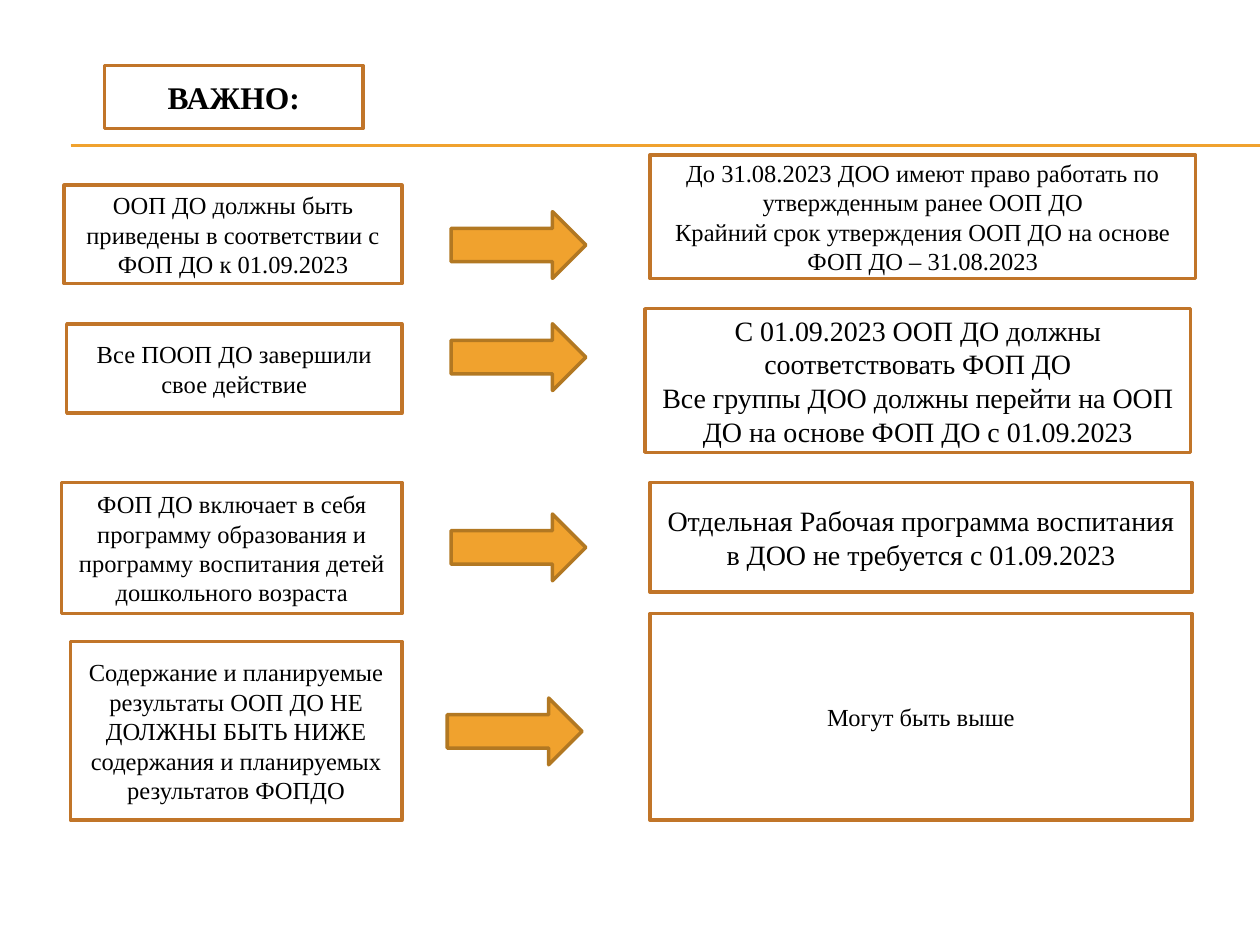
from lxml import etree
from pptx import Presentation
from pptx.dml.color import RGBColor
from pptx.enum.shapes import MSO_CONNECTOR, MSO_SHAPE
from pptx.enum.text import MSO_ANCHOR, PP_ALIGN
from pptx.oxml.ns import qn
from pptx.util import Inches, Pt

WHITE = RGBColor(0xFF, 0xFF, 0xFF)
BLACK = RGBColor(0x00, 0x00, 0x00)
AMBER = RGBColor(0xF0, 0xA2, 0x2E)
DARK_AMBER = RGBColor(0xB2, 0x78, 0x22)
BROWN = RGBColor(0xC1, 0x75, 0x29)

RECTANGLE = MSO_SHAPE.RECTANGLE
RIGHT_ARROW = MSO_SHAPE.RIGHT_ARROW
STRAIGHT = MSO_CONNECTOR.STRAIGHT
MIDDLE = MSO_ANCHOR.MIDDLE
CENTER = PP_ALIGN.CENTER

FONT = "Times New Roman"
COLUMNS, ROWS = 100, 75
LEFT_EDGE = 31.9  # shared right side of the requirement boxes
ARROW_WIDTH, ARROW_HEIGHT = 10.7, 5.3

# left, top, height, text
REQUIREMENTS = [
    (5.1, 14.7, 7.8, "ООП ДО должны быть приведены в соответствии с ФОП ДО к 01.09.2023"),
    (5.3, 25.7, 7.1, "Все ПООП ДО завершили свое действие"),
    (4.9, 38.3, 10.4, "ФОП ДО включает в себя программу образования и программу "
                      "воспитания детей дошкольного возраста"),
    (5.6, 50.9, 14.2, "Содержание и планируемые результаты ООП ДО НЕ ДОЛЖНЫ БЫТЬ НИЖЕ "
                      "содержания и планируемых результатов ФОПДО"),
]
# left, top, width, height, font size, paragraphs
CONSEQUENCES = [
    (51.6, 12.3, 43.3, 9.8, 14, [
        "До 31.08.2023 ДОО имеют право работать по утвержденным ранее ООП ДО",
        "Крайний срок утверждения ООП ДО на основе ФОП ДО – 31.08.2023"]),
    (51.2, 24.5, 43.3, 11.4, 16, [
        "С 01.09.2023 ООП ДО должны соответствовать ФОП ДО",
        "Все группы ДОО должны перейти на ООП ДО на основе ФОП ДО с 01.09.2023"]),
    (51.6, 38.3, 43, 8.7, 16, [
        "Отдельная Рабочая программа воспитания в ДОО не требуется с 01.09.2023"]),
    (51.6, 48.7, 43, 16.4, 14, ["Могут быть выше"]),
]
ARROWS = [(35.8, 16.8), (35.8, 25.7), (35.8, 40.8), (35.5, 55.4)]


class SlideBuilder:
    """Draws styled elements, placed in grid columns and rows."""

    def __init__(self, deck):
        self.page = deck.slides.add_slide(deck.slide_layouts[6])
        self.column = deck.slide_width / COLUMNS
        self.row = deck.slide_height / ROWS

    def place(self, across, down):
        return round(across * self.column), round(down * self.row)

    def shape(self, kind, left, top, width, height, fill, outline):
        shape = self.page.shapes.add_shape(
            kind, *self.place(left, top), *self.place(width, height))
        shape.shadow.inherit = False
        shape.fill.solid()
        shape.fill.fore_color.rgb = fill
        shape.line.color.rgb = outline
        shape.line.width = Pt(2)
        return shape

    def box(self, left, top, width, height, paragraphs, size=14, bold=False):
        box = self.shape(RECTANGLE, left, top, width, height, WHITE, BROWN)
        frame = box.text_frame
        frame.word_wrap = True
        frame.vertical_anchor = MIDDLE
        frame.text = "\n".join(paragraphs)
        for para in frame.paragraphs:
            para.alignment = CENTER
            para.font.name = FONT
            para.font.size = Pt(size)
            para.font.bold = bold
            para.font.color.rgb = BLACK

    def arrow(self, left, top):
        self.shape(RIGHT_ARROW, left, top, ARROW_WIDTH, ARROW_HEIGHT, AMBER, DARK_AMBER)

    def rule(self, left, top):
        """Draw a horizontal line running to the right edge of the slide."""
        rule = self.page.shapes.add_connector(
            STRAIGHT, *self.place(left, top), *self.place(COLUMNS, top))
        rule.line.color.rgb = AMBER
        rule.line.width = Pt(0.75)
        etree.SubElement(rule._element.spPr, qn("a:effectLst"))


def main():
    deck = Presentation()
    deck.slide_width, deck.slide_height = Inches(10), Inches(7.5)
    slide = SlideBuilder(deck)

    for top in (11.5, 11.6):
        slide.rule(5.6, top)
    slide.box(8.3, 5.2, 20.5, 5, ["ВАЖНО:"], size=18, bold=True)
    for left, top, height, text in REQUIREMENTS:
        slide.box(left, top, LEFT_EDGE - left, height, [text])
    for left, top, width, height, size, paragraphs in CONSEQUENCES:
        slide.box(left, top, width, height, paragraphs, size)
    for left, top in ARROWS:
        slide.arrow(left, top)

    deck.save("out.pptx")


if __name__ == "__main__":
    main()
